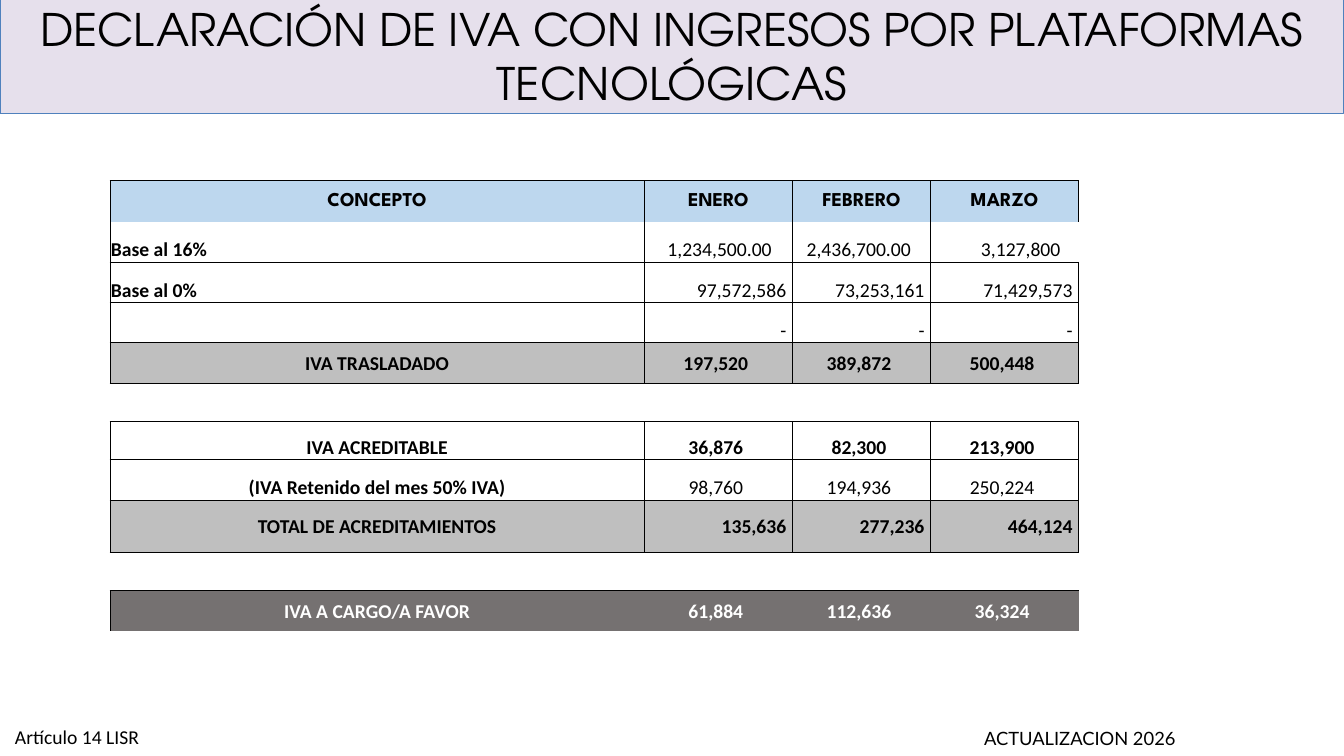
from lxml.etree import SubElement
from pptx import Presentation
from pptx.dml.color import RGBColor
from pptx.enum.text import MSO_ANCHOR as ANCHOR, PP_ALIGN as ALIGN
from pptx.oxml.ns import qn
from pptx.util import Inches, Pt

BLACK, WHITE = "000000", "FFFFFF"
BLUE, GRAY, DARK = "BDD7EE", "BFBFBF", "757171"
L, C, R = ALIGN.LEFT, ALIGN.CENTER, ALIGN.RIGHT
MID, LOW = ANCHOR.MIDDLE, ANCHOR.BOTTOM


def style(p, font, size, color=BLACK, bold=False, align=L):
    p.alignment = align
    for r in p.runs:
        r.font.name, r.font.size, r.font.bold = font, Pt(size), bold
        r.font.color.rgb = RGBColor.from_string(color)


def set_borders(cell, edges):
    tcPr = cell._tc.get_or_add_tcPr()
    for edge in "LRTB":
        ln = SubElement(tcPr, qn("a:ln" + edge), w=str(Pt(0.5)))
        if edge in edges:
            fill = SubElement(ln, qn("a:solidFill"))
            SubElement(fill, qn("a:srgbClr"), val=BLACK)
        else:
            SubElement(ln, qn("a:noFill"))


prs = Presentation()
prs.slide_width, prs.slide_height = Inches(13.33), Inches(7.5)
s = prs.slides.add_slide(prs.slide_layouts[5])

# Title band
title = s.shapes.title
title.left, title.top = 0, Inches(-0.03)
title.width, title.height = prs.slide_width, Inches(1.16)
title.fill.solid()
title.fill.fore_color.rgb = RGBColor.from_string("E6E0EC")
title.line.color.rgb = RGBColor.from_string("4F81BD")
title.line.width = Pt(0.75)
tf = title.text_frame
tf.text = "DECLARACIÓN DE IVA CON INGRESOS POR PLATAFORMAS TECNOLÓGICAS"
tf.vertical_anchor = MID
tf.margin_left = tf.margin_right = Inches(0.13)
tf.margin_top = tf.margin_bottom = Inches(0.06)
style(tf.paragraphs[0], "TeX Gyre Adventor", 32, align=C)

# Footer texts
for text, x, y, w, font, size, inset in [
    ("ACTUALIZACION 2026", 9.64, 7.17, 3.69, "Lato", 13.1, 0.12),
    ("Artículo 14 LISR", 0.05, 7.14, 2.99, "Calibri", 14, 0.1),
]:
    sp = s.shapes.add_textbox(Inches(x), Inches(y), Inches(w), Inches(0.34))
    tf = sp.text_frame
    tf.word_wrap = True
    tf.margin_left = tf.margin_right = Inches(inset)
    tf.text = text
    style(tf.paragraphs[0], font, size)

# Table rows: height, fill, edges, anchor, label align, value align, value bold, texts
blank = (0.38, WHITE, "TB", MID, C, C, False, [""] * 4)
rows = [
    (0.41, BLUE, "LRT", MID, C, C, True, ["CONCEPTO", "ENERO", "FEBRERO", "MARZO"]),
    (0.4, WHITE, "LRB", LOW, L, L, False,
     ["Base al 16%", "1,234,500.00", "2,436,700.00", "3,127,800"]),
    (0.4, WHITE, "LRTB", LOW, L, R, False,
     ["Base al 0%", "97,572,586", "73,253,161", "71,429,573"]),
    (0.4, WHITE, "LRTB", LOW, L, R, False, ["", "-", "-", "-"]),
    (0.4, GRAY, "LRTB", MID, C, C, True,
     ["IVA TRASLADADO", "197,520", "389,872", "500,448"]),
    blank,
    (0.38, WHITE, "LRTB", LOW, C, C, True,
     ["IVA ACREDITABLE", "36,876", "82,300", "213,900"]),
    (0.4, WHITE, "LRTB", LOW, C, C, False,
     ["(IVA Retenido del mes 50% IVA)", "98,760", "194,936", "250,224"]),
    (0.52, GRAY, "LRTB", MID, C, R, True,
     ["TOTAL DE ACREDITAMIENTOS", "135,636", "277,236", "464,124"]),
    blank,
    (0.4, DARK, "T", MID, C, C, True,
     ["IVA A CARGO/A FAVOR", "61,884", "112,636", "36,324"]),
]
widths = [5.3, 1.47, 1.37, 1.47]
base_indents = [0.01, 0.23, 0.14, 0.5]
height = sum(row[0] for row in rows)
table = s.shapes.add_table(len(rows), len(widths), Inches(1.09), Inches(1.79),
                           Inches(sum(widths)), Inches(height)).table
table.first_row = table.horz_banding = False
for col, w in zip(table.columns, widths):
    col.width = Inches(w)

for i, (h, fill, edges, anchor, label_al, value_al, bold, texts) in enumerate(rows):
    table.rows[i].height = Inches(h)
    for j, text in enumerate(texts):
        cell = table.cell(i, j)
        cell.text_frame.text = text
        style(cell.text_frame.paragraphs[0],
              "League Spartan" if fill == BLUE else "Calibri", 14,
              WHITE if fill == DARK else BLACK,
              bold or j == 0, value_al if j else label_al)
        cell.vertical_anchor = anchor
        indent = base_indents[j] if value_al == L else 0.01
        cell.margin_left, cell.margin_top = Inches(indent), Inches(0.01)
        cell.margin_right = Inches(0.06 if j and i else 0.01)
        cell.margin_bottom = 0
        # The first base row is open at the right, the last row closed at the left
        sides = edges
        if i == 1 and j == 3:
            sides = "LB"
        elif fill == DARK and j == 0:
            sides = "LT"
        set_borders(cell, sides)
        cell.fill.solid()
        cell.fill.fore_color.rgb = RGBColor.from_string(fill)

prs.save("out.pptx")
